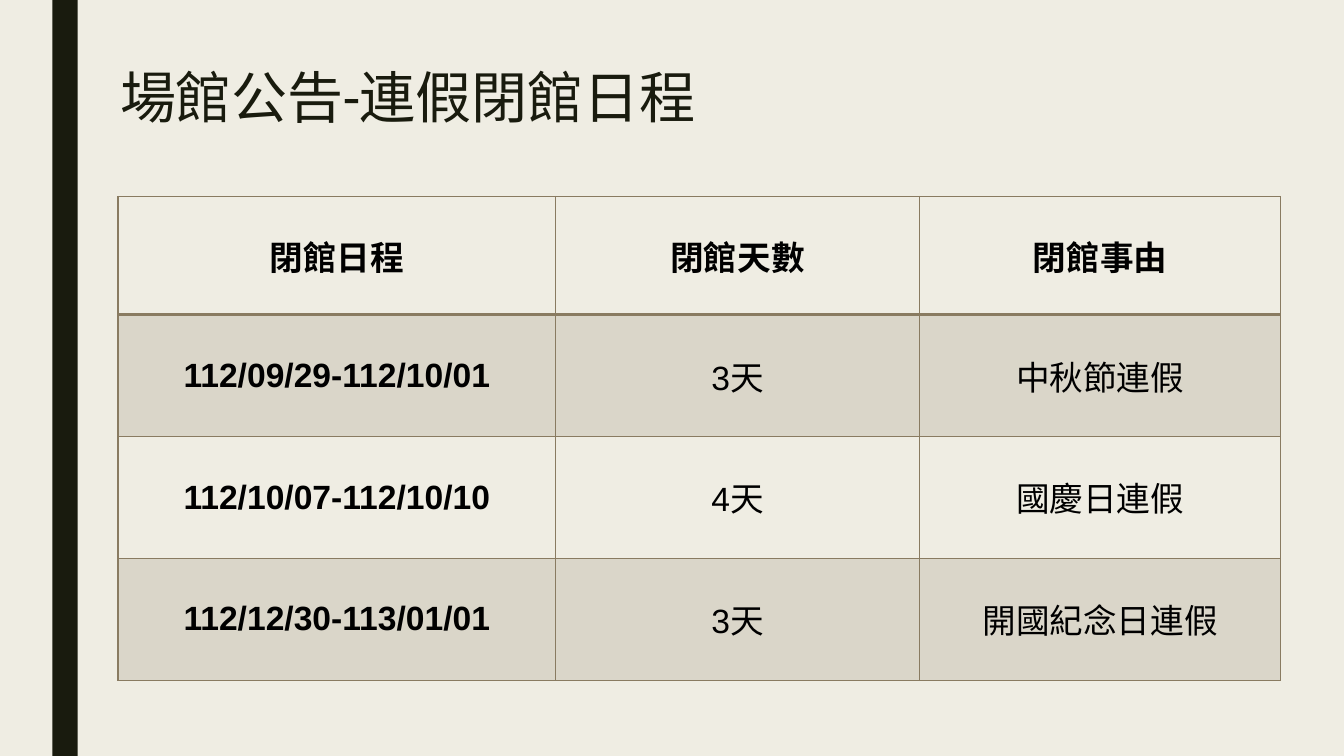
"""Build the slide announcing the venue's holiday closing dates."""
import pptx
import pptx.dml.color
import pptx.enum.shapes
import pptx.enum.text
import pptx.oxml
import pptx.oxml.ns
import pptx.util
from dataclasses import dataclass


@dataclass(frozen=True)
class Theme:
    background: str = "EFEDE3"
    dark: str = "191B0E"
    accent: str = "897B61"
    text: str = "000000"
    band_opacity: int = 20
    title_font: str = "Roboto"
    body_font: str = "Arial"
    title_size: int = 40
    body_size: int = 24


THEME = Theme()
COLUMN_SHARES = [32.56, 27.08, 26.86]
ROW_SHARES = [15.6, 16.13, 16.13, 16.13]
CLOSINGS = [
    ["閉館日程", "閉館天數", "閉館事由"],
    ["112/09/29-112/10/01", "3天", "中秋節連假"],
    ["112/10/07-112/10/10", "4天", "國慶日連假"],
    ["112/12/30-113/01/01", "3天", "開國紀念日連假"],
]

presentation = pptx.Presentation()
presentation.slide_width = pptx.util.Inches(13.33)
presentation.slide_height = pptx.util.Inches(7.5)


def box(left, top, width, height):
    """Turn percentages of the slide into a left, top, width, height tuple."""
    across, down = presentation.slide_width / 100, presentation.slide_height / 100
    return int(left * across), int(top * down), int(width * across), int(height * down)


def add_run(paragraph, text, font_name, size, color, bold=False):
    """Add one formatted run to a paragraph."""
    run = paragraph.add_run()
    run.text = text
    run.font.name = font_name
    run.font.size = pptx.util.Pt(size)
    run.font.bold = bold
    run.font.color.rgb = pptx.dml.color.RGBColor.from_string(color)


slide = presentation.slides.add_slide(presentation.slide_layouts.get_by_name("Title Only"))
slide.background.fill.solid()
slide.background.fill.fore_color.rgb = pptx.dml.color.RGBColor.from_string(THEME.background)

side_bar = slide.shapes.add_shape(pptx.enum.shapes.MSO_SHAPE.RECTANGLE, *box(3.9, 0, 1.88, 100))
side_bar.shadow.inherit = False
side_bar.fill.solid()
side_bar.fill.fore_color.rgb = pptx.dml.color.RGBColor.from_string(THEME.dark)
side_bar.line.fill.background()

title = slide.shapes.title
title.left, title.top, title.width, title.height = box(8.18, 8.67, 82.52, 23.47)
title.text_frame.word_wrap = True
title.text_frame.auto_size = pptx.enum.text.MSO_AUTO_SIZE.NONE
title.text_frame.vertical_anchor = pptx.enum.text.MSO_ANCHOR.TOP
heading = title.text_frame.paragraphs[0]
heading.alignment = pptx.enum.text.PP_ALIGN.LEFT
heading.line_spacing = 0.89
add_run(heading, "場館公告-連假閉館日程", THEME.title_font, THEME.title_size, THEME.dark)

table = slide.shapes.add_table(
    len(ROW_SHARES), len(COLUMN_SHARES), *box(8.78, 26, sum(COLUMN_SHARES), sum(ROW_SHARES))
).table
table.first_row = False
table.horz_banding = False
for column, share in zip(table.columns, COLUMN_SHARES):
    column.width = box(0, 0, share, 0)[2]
for row, share in zip(table.rows, ROW_SHARES):
    row.height = box(0, 0, 0, share)[3]

for row_index, texts in enumerate(CLOSINGS):
    for column_index, text in enumerate(texts):
        cell = table.cell(row_index, column_index)
        cell.vertical_anchor = pptx.enum.text.MSO_ANCHOR.MIDDLE
        cell.margin_left = cell.margin_right = pptx.util.Inches(0.07)
        cell.margin_top = cell.margin_bottom = 0
        paragraph = cell.text_frame.paragraphs[0]
        paragraph.alignment = pptx.enum.text.PP_ALIGN.CENTER
        is_bold = row_index == 0 or column_index == 0
        add_run(paragraph, text, THEME.body_font, THEME.body_size, THEME.text, is_bold)

        properties = cell._tc.get_or_add_tcPr()
        for side in "LRTB":
            under_header = (row_index, side) in [(0, "B"), (1, "T")]
            width = pptx.util.Pt(2 if under_header else 1)
            properties.append(pptx.oxml.parse_xml(
                f'<a:ln{side} {pptx.oxml.ns.nsdecls("a")} w="{width}"><a:solidFill>'
                f'<a:srgbClr val="{THEME.accent}"/></a:solidFill></a:ln{side}>'
            ))
        if row_index % 2:
            cell.fill.solid()
            cell.fill.fore_color.rgb = pptx.dml.color.RGBColor.from_string(THEME.accent)
            band_color = properties.find(pptx.oxml.ns.qn("a:solidFill"))[0]
            band_color.append(pptx.oxml.parse_xml(
                f'<a:alpha {pptx.oxml.ns.nsdecls("a")} val="{THEME.band_opacity * 1000}"/>'
            ))
        else:
            cell.fill.background()

presentation.save("out.pptx")
